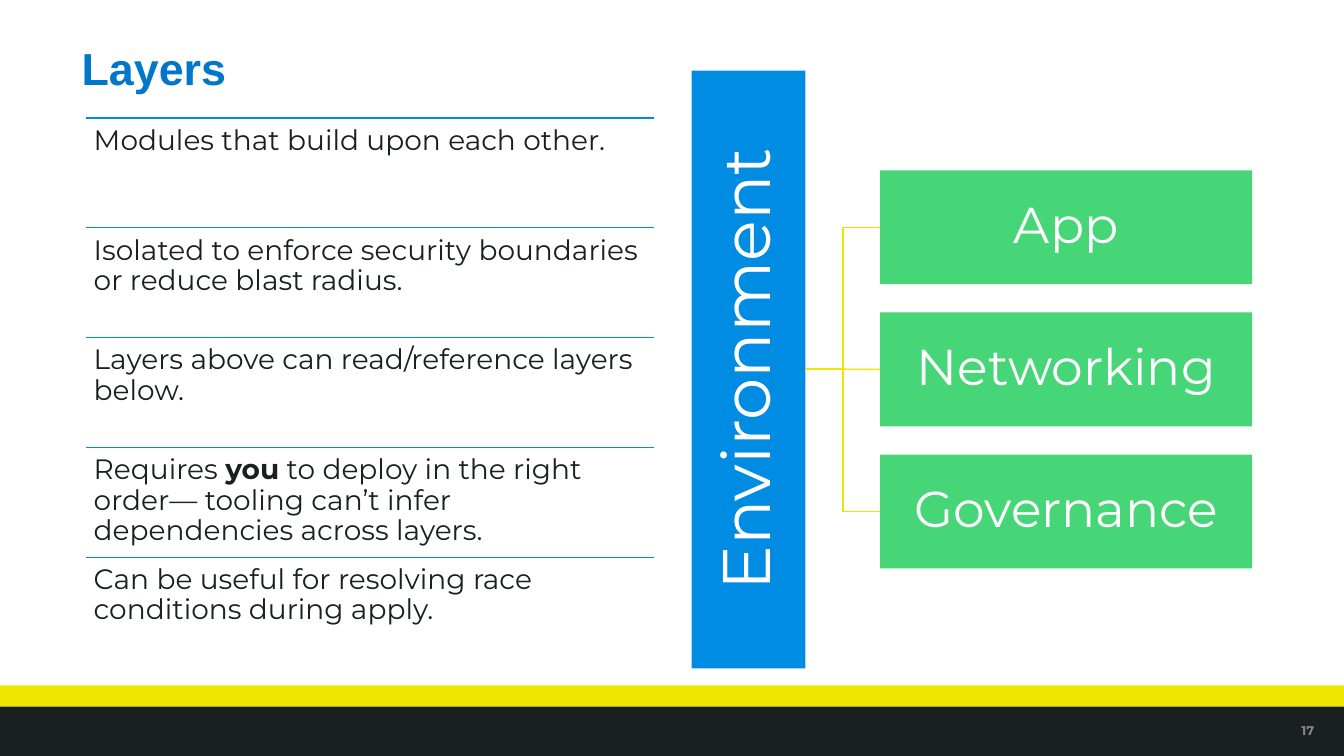
from dataclasses import dataclass

from lxml.etree import SubElement
from pptx import Presentation
from pptx.dml.color import RGBColor
from pptx.enum.shapes import MSO_CONNECTOR, MSO_SHAPE
from pptx.enum.text import MSO_ANCHOR, MSO_AUTO_SIZE, PP_ALIGN
from pptx.oxml.ns import qn
from pptx.shapes.autoshape import Shape
from pptx.shapes.connector import Connector
from pptx.slide import Slide
from pptx.util import Inches, Pt

BLUE, GREEN, YELLOW = "008CE2", "46D577", "EDE600"
DARK, WHITE, GRAY, TITLE = "1A1F20", "FFFFFF", "878888", "0077C8"
FONT = "Montserrat"


@dataclass
class Box:
    left: float
    top: float
    width: float
    height: float

    def emu(self) -> list[int]:
        return [Inches(v) for v in (self.left, self.top, self.width, self.height)]


@dataclass
class Style:
    size: int
    color: str
    font: str = FONT
    bold: bool = False
    align: PP_ALIGN = PP_ALIGN.LEFT
    anchor: MSO_ANCHOR = MSO_ANCHOR.MIDDLE
    inset: float = 0.03
    lines: float = 0.9


# Odd parts of a point are bold.
POINTS = [
    ["Modules that build upon each other."],
    ["Isolated to enforce security boundaries or reduce blast radius."],
    ["Layers above can read/reference layers below."],
    ["Requires ", "you",
     " to deploy in the right order— tooling can’t infer dependencies across layers."],
    ["Can be useful for resolving race conditions during apply."],
]
LAYERS = ["App", "Networking", "Governance"]


def rgb(color: str) -> RGBColor:
    return RGBColor.from_string(color)


def write(shape: Shape, parts: list[str], style: Style) -> None:
    """Set one paragraph of text, with its odd parts in bold."""
    frame = shape.text_frame
    frame.auto_size = MSO_AUTO_SIZE.NONE
    frame.word_wrap = True
    frame.vertical_anchor = style.anchor
    frame.margin_left = frame.margin_right = Inches(style.inset)
    frame.margin_top = frame.margin_bottom = Inches(style.inset)
    para = frame.paragraphs[0]
    para.alignment, para.line_spacing = style.align, style.lines
    for i, part in enumerate(parts):
        run = para.add_run()
        run.text = part
        run.font.name, run.font.size = style.font, Pt(style.size)
        run.font.bold = style.bold or i % 2 == 1
        run.font.color.rgb = rgb(style.color)


def block(slide: Slide, box: Box, color: str) -> Shape:
    shape = slide.shapes.add_shape(MSO_SHAPE.RECTANGLE, *box.emu())
    shape.shadow.inherit = False
    shape.fill.solid()
    shape.fill.fore_color.rgb = rgb(color)
    shape.line.fill.background()
    return shape


def wire(slide: Slide, kind: MSO_CONNECTOR, start: tuple[float, float],
         end: tuple[float, float], color: str) -> Connector:
    line = slide.shapes.add_connector(kind, *[Inches(v) for v in start + end])
    line.line.color.rgb = rgb(color)
    line.line.width = Pt(1)
    SubElement(line._element.spPr, qn("a:effectLst"))
    return line


def footer(slide: Slide) -> None:
    block(slide, Box(0, 6.8, 13.33, 0.21), YELLOW)
    block(slide, Box(0, 7.01, 13.33, 0.49), DARK)
    number = slide.shapes.add_textbox(*Box(12.73, 7.07, 0.48, 0.36).emu())
    write(number, ["17"], Style(9, GRAY, bold=True, align=PP_ALIGN.CENTER, lines=1))


def points(slide: Slide) -> None:
    left, top, width, pitch = 0.85, 1.17, 5.64, 1.09
    style = Style(20, DARK, anchor=MSO_ANCHOR.TOP, inset=0.08)
    for i, parts in enumerate(POINTS):
        y = top + i * pitch
        wire(slide, MSO_CONNECTOR.STRAIGHT, (left, y), (left + width, y), BLUE)
        text = slide.shapes.add_textbox(*Box(left, y, width, pitch).emu())
        write(text, parts, style)


def diagram(slide: Slide) -> None:
    """Draw the environment tower and the layers that branch from it."""
    left, top, width, height, pitch = 8.73, 1.69, 3.69, 1.13, 1.41
    start = (7.99, 3.66)
    tower = block(slide, Box(4.46, 3.1, 5.93, height), BLUE)
    tower.rotation = 270
    write(tower, ["Environment"], Style(48, WHITE, align=PP_ALIGN.CENTER))

    for i, name in enumerate(LAYERS):
        y = top + i * pitch
        layer = block(slide, Box(left, y, width, height), GREEN)
        write(layer, [name], Style(36, WHITE, align=PP_ALIGN.CENTER))
        if i == 1:
            link = wire(slide, MSO_CONNECTOR.STRAIGHT, start, (left, start[1]), YELLOW)
            # The tower is turned, so its bottom side faces right.
            link.begin_connect(tower, 2)
            link.end_connect(layer, 1)
            link.begin_x, link.begin_y = [Inches(v) for v in start]
        else:
            wire(slide, MSO_CONNECTOR.ELBOW, start, (left, y + height / 2), YELLOW)


def main() -> None:
    deck = Presentation()
    deck.slide_width, deck.slide_height = Inches(13.33), Inches(7.5)
    slide = deck.slides.add_slide(deck.slide_layouts[5])
    title = slide.shapes.title
    title.left, title.top, title.width, title.height = Box(0.71, 0.4, 6.02, 0.6).emu()
    write(title, ["Layers"], Style(32, TITLE, "Arial", True, inset=0.1))
    footer(slide)
    diagram(slide)
    points(slide)
    deck.save("out.pptx")


if __name__ == "__main__":
    main()
